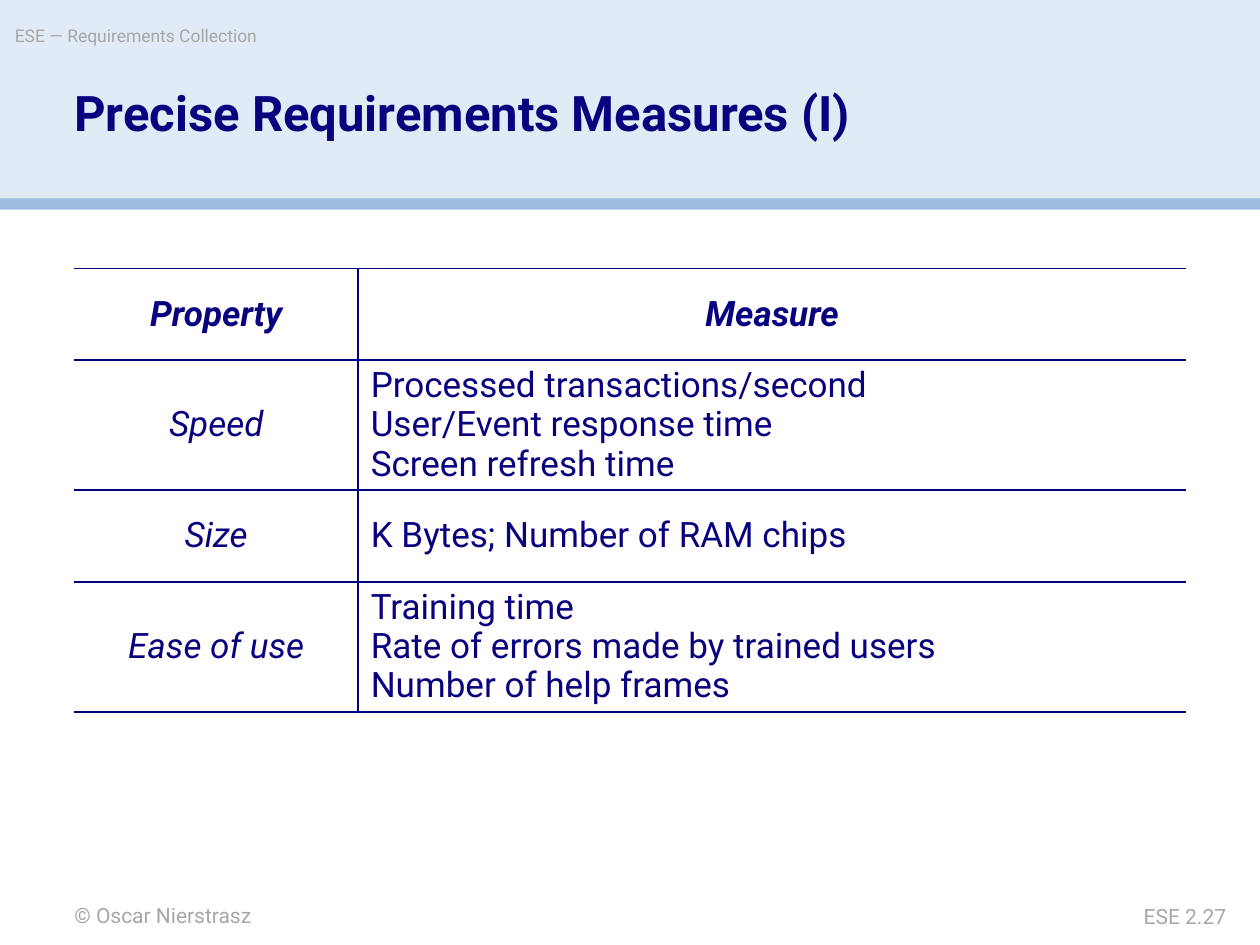
from lxml import etree
from pptx import Presentation
from pptx.dml.color import RGBColor
from pptx.enum.shapes import MSO_SHAPE
from pptx.enum.text import MSO_ANCHOR, MSO_AUTO_SIZE, PP_ALIGN
from pptx.oxml.ns import qn
from pptx.util import Cm, Pt

RECT = MSO_SHAPE.RECTANGLE
TOP, MIDDLE = MSO_ANCHOR.TOP, MSO_ANCHOR.MIDDLE
LEFT, CENTER, RIGHT = PP_ALIGN.LEFT, PP_ALIGN.CENTER, PP_ALIGN.RIGHT
NO_FIT = MSO_AUTO_SIZE.NONE

# Content
TITLE = "Precise Requirements Measures (I)"
ROWS = [
    ("Property", ["Measure"]),
    ("Speed", ["Processed transactions/second",
               "User/Event response time",
               "Screen refresh time"]),
    ("Size", ["K Bytes; Number of RAM chips"]),
    ("Ease of use", ["Training time",
                     "Rate of errors made by trained users",
                     "Number of help frames"]),
]

# Theme
THEME = {
    "font": "Roboto", "ink": "0A017F", "gray": "A7A7A7", "rule": "00027F",
    "band": "E1EBF5", "stripe": "9CBDDE",
    "title": 28, "body": 20, "foot": 12, "head": 10, "line": 1,
}

# Layout in centimetres: left, top, width, height
WIDTH, HEIGHT, EDGE = 25.4, 19.05, 1.5
BANDS = [("band", (0, 0, WIDTH, 4.01)), ("stripe", (0, 4, WIDTH, 0.23))]
TITLE_BOX = (EDGE, 1.8, 18.39, 2.26)
NOTES = [
    ("© Oscar Nierstrasz", "foot", LEFT, (EDGE, 18.19, 10.59, 0.51)),
    ("ESE — Requirements Collection", "head", LEFT, (0.3, 0.51, 14.99, 0.71)),
    ("ESE 2.27", "foot", RIGHT, (20.96, 18.21, 3.76, 0.51)),
]
TABLE_TOP, COLS = 5.41, (5.72, 16.69)
SHORT, TALL = 1.85, 2.62


def color(name):
    return RGBColor.from_string(THEME[name])


def apply(item, values):
    for name, value in values.items():
        setattr(item, name, value)


def style(frame, text, size, ink, align=LEFT, space=1.0, **look):
    para = frame.paragraphs[0]
    para.text = text
    apply(para, {"alignment": align, "line_spacing": space})
    for run in para.runs:
        apply(run.font, {"name": THEME["font"], "size": Pt(THEME[size]), **look})
        run.font.color.rgb = color(ink)


def bare(frame):
    apply(frame, {"margin_left": 0, "margin_top": 0, "margin_right": 0,
                  "margin_bottom": 0, "word_wrap": True,
                  "auto_size": NO_FIT, "vertical_anchor": TOP})


def border(cell, sides):
    props = cell._tc.get_or_add_tcPr()
    for spot, side in enumerate("LRTB"):
        line = etree.Element(qn(f"a:ln{side}"))
        if side in sides:
            line.set("w", str(Pt(THEME["line"])))
            fill = etree.SubElement(line, qn("a:solidFill"))
            etree.SubElement(fill, qn("a:srgbClr"), val=THEME["rule"])
        else:
            etree.SubElement(line, qn("a:noFill"))
        props.insert(spot, line)


def main():
    deck = Presentation()
    apply(deck, {"slide_width": Cm(WIDTH), "slide_height": Cm(HEIGHT)})
    slide = deck.slides.add_slide(deck.slide_layouts[5])
    shapes = slide.shapes

    # Header bands
    for fill, box in BANDS:
        band = shapes.add_shape(RECT, *map(Cm, box))
        band.shadow.inherit = False
        band.fill.solid()
        band.fill.fore_color.rgb = color(fill)
        band.line.fill.background()

    # Header and footer lines
    for text, size, align, box in NOTES:
        frame = shapes.add_textbox(*map(Cm, box)).text_frame
        bare(frame)
        style(frame, text, size, "gray", align)

    # Title, brought in front of the bands
    title = shapes.title
    apply(title, dict(zip(("left", "top", "width", "height"), map(Cm, TITLE_BOX))))
    bare(title.text_frame)
    style(title.text_frame, TITLE, "title", "ink", space=0.9, bold=True)
    shapes.element.append(title.element)

    # Table
    highs = [TALL if len(lines) > 1 else SHORT for _, lines in ROWS]
    table = shapes.add_table(len(ROWS), len(COLS), Cm(EDGE), Cm(TABLE_TOP),
                             Cm(sum(COLS)), Cm(sum(highs))).table
    apply(table, {"first_row": False, "horz_banding": False})
    for col, wide in zip(table.columns, COLS):
        col.width = Cm(wide)
    for at, (label, lines) in enumerate(ROWS):
        table.rows[at].height = Cm(highs[at])
        head = at == 0
        for spot, text in enumerate((label, "\v".join(lines))):
            cell = table.cell(at, spot)
            key = spot == 0
            cell.vertical_anchor = MIDDLE
            cell.fill.background()
            border(cell, "RTB" if key else "LTB")
            style(cell.text_frame, text, "body", "ink",
                  CENTER if head or key else LEFT, 0.95,
                  bold=head, italic=head or key)

    deck.save("out.pptx")


if __name__ == "__main__":
    main()
